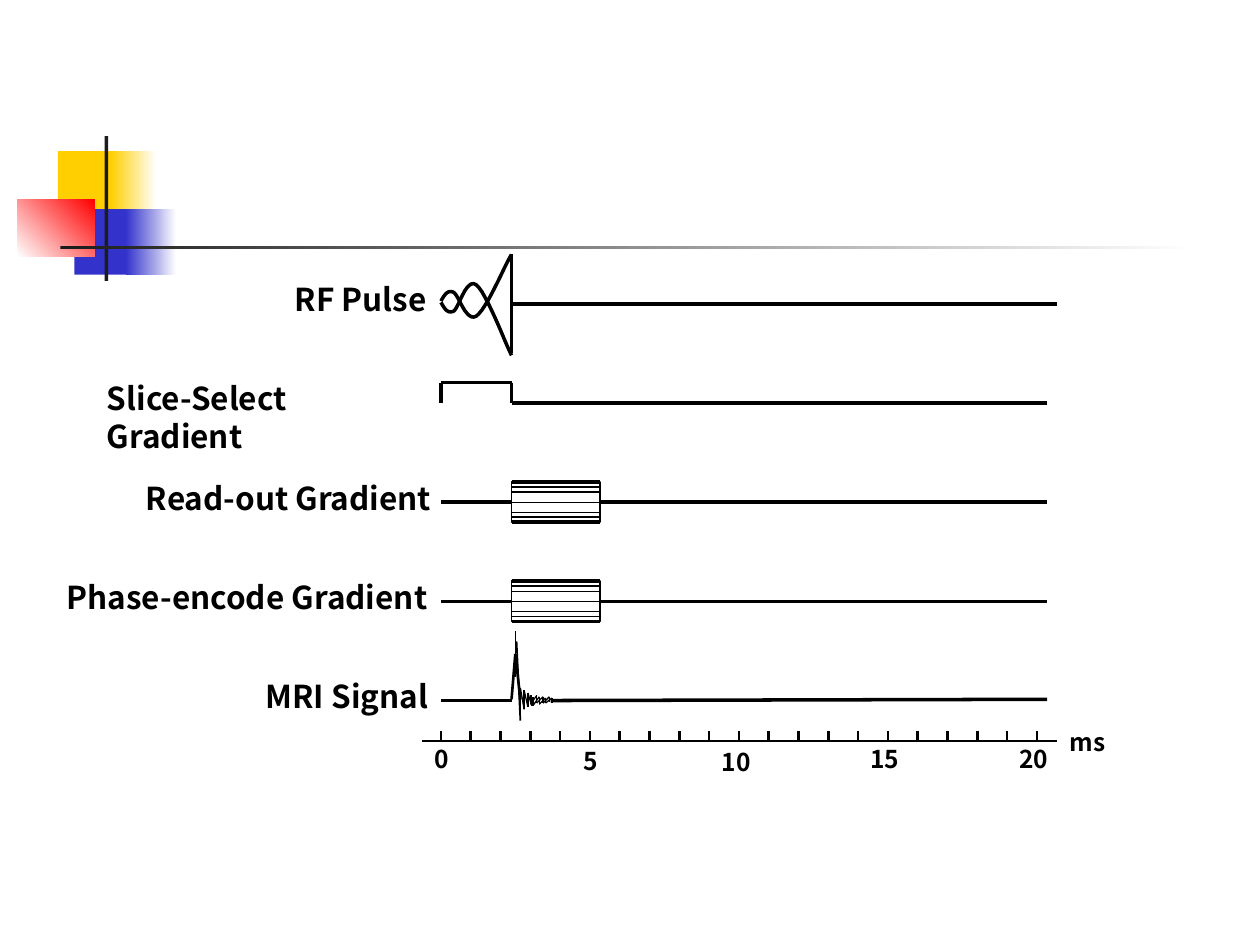
from itertools import pairwise

from lxml import etree
from pptx import Presentation
from pptx import util as u
from pptx.dml.color import RGBColor
from pptx.enum import shapes, text
from pptx.oxml.ns import qn

BLACK = RGBColor(0x00, 0x00, 0x00)
WHITE = RGBColor(0xFF, 0xFF, 0xFF)
YELLOW = RGBColor(0xFF, 0xCF, 0x01)
BLUE = RGBColor(0x33, 0x33, 0xCC)
RED = RGBColor(0xFF, 0x00, 0x00)
CHARCOAL = RGBColor(0x1C, 0x1C, 0x1C)
FONT = "Noto Sans CJK KR"

presentation = Presentation()
presentation.slide_width, presentation.slide_height = u.Inches(10), u.Inches(7.5)
slide = presentation.slides.add_slide(presentation.slide_layouts[6])

# Grid: one column per millisecond, one row per waveform
START, COLUMN = 3.5, 0.2365
PULSE_END, GATE_END, TRACE_END = 4.06, 4.76, 8.31
ROWS = [2.41 + 0.105 * 7.5 * row for row in range(5)]
RF, SLICE, READ, PHASE, SIGNAL = ROWS
AXIS = 5.88


def polyline(points, width):
    """Join the points with straight connectors and return the last one."""
    for (x1, y1), (x2, y2) in pairwise(points):
        connector = slide.shapes.add_connector(
            shapes.MSO_CONNECTOR.STRAIGHT, *map(u.Inches, (x1, y1, x2, y2)))
        connector.line.color.rgb = BLACK
        connector.line.width = u.Pt(width)
        etree.SubElement(connector._element.spPr, qn("a:effectLst"))
    return connector


def label(words, left, top, width, height, size):
    box = slide.shapes.add_textbox(*map(u.Inches, (left, top, width, height)))
    box.text_frame.word_wrap = True
    box.text_frame.auto_size = text.MSO_AUTO_SIZE.NONE
    paragraph = box.text_frame.paragraphs[0]
    paragraph.text = words
    for name, value in {"name": FONT, "size": u.Pt(size), "bold": True}.items():
        setattr(paragraph.font, name, value)
    paragraph.font.color.rgb = BLACK


# Corner ornament: left, top, width, height, start colour, end colour, angle
for *frame, first, last, angle in [
    (0.46, 1.2, 0.48, 0.52, YELLOW, YELLOW, 0),
    (0.88, 1.2, 0.36, 0.52, YELLOW, WHITE, 0),
    (0.59, 1.66, 0.46, 0.52, BLUE, BLUE, 0),
    (1, 1.66, 0.4, 0.52, BLUE, WHITE, 0),
    (0.14, 1.58, 0.61, 0.46, WHITE, RED, 45),
    (0.83, 1.08, 0.03, 1.15, CHARCOAL, CHARCOAL, 0),
    (0.48, 1.95, 9, 0.03, CHARCOAL, WHITE, 0),
]:
    shape = slide.shapes.add_shape(
        shapes.MSO_SHAPE.RECTANGLE, *map(u.Inches, frame))
    shape.shadow.inherit = False
    shape.line.fill.background()
    if first == last:
        shape.fill.solid()
        shape.fill.fore_color.rgb = first
    else:
        shape.fill.gradient()
        shape.fill.gradient_angle = angle
        for stop, colour in zip(shape.fill.gradient_stops, (first, last)):
            stop.color.rgb = colour

# Time axis with a tick per millisecond
polyline([(3.35, AXIS), (8.39, AXIS)], 1.5)
for tick in range(21):
    x = START + tick * COLUMN
    polyline([(x, AXIS - 0.08), (x, AXIS)], 1.5)
for words, left, top, width in [
    ("0", 3.35, 5.86, 0.32), ("5", 4.53, 5.87, 0.32), ("10", 5.63, 5.88, 0.47),
    ("15", 6.81, 5.86, 0.55), ("20", 7.99, 5.86, 0.47), ("ms", 8.39, 5.72, 0.63),
]:
    label(words, left, top, width, 0.33, 14)

# Waveform names
for baseline, (words, left, width) in zip(ROWS, [
    ("RF Pulse", 2.24, 1.42),
    ("Slice-Select Gradient", 0.75, 2.7),
    ("Read-out Gradient", 1.06, 2.52),
    ("Phase-encode Gradient", 0.43, 3.1),
    ("MRI Signal", 2.01, 1.52),
]):
    label(words, left, baseline - 0.235, width, 0.4, 18)

# RF pulse: two mirrored envelopes of cubic curves, in thousandths of an inch
for curve in [
    [(3500, 2390), (3530, 2340), (3550, 2300), (3600, 2320), (3640, 2340),
     (3700, 2560), (3780, 2510), (3860, 2460), (4010, 2100), (4060, 2020)],
    [(3500, 2400), (3530, 2450), (3550, 2490), (3600, 2470), (3640, 2450),
     (3700, 2200), (3780, 2260), (3860, 2320), (4010, 2720), (4060, 2820)],
]:
    points = []
    for start in range(0, 9, 3):
        for step in range(1, 13):
            t = step / 12
            weights = ((1 - t) ** 3, 3 * t * (1 - t) ** 2, 3 * t * t * (1 - t), t ** 3)
            points.append(tuple(
                sum(weight * value for weight, value in zip(weights, values))
                for values in zip(*curve[start:start + 4])))
    builder = slide.shapes.build_freeform(*curve[0], scale=u.Inches(1) / 1000)
    builder.add_line_segments(points, close=False)
    envelope = builder.convert_to_shape()
    envelope.shadow.inherit = False
    envelope.fill.background()
    envelope.line.color.rgb = BLACK
    envelope.line.width = u.Pt(2)
polyline([(PULSE_END, 2.02), (PULSE_END, 2.8)], 2)
polyline([(PULSE_END, RF), (8.39, RF)], 2.25)

# Slice-select gradient
polyline([(START, SLICE), (START, SLICE - 0.16), (PULSE_END, SLICE - 0.16),
          (PULSE_END, SLICE), (TRACE_END, SLICE)], 2)

# Read-out and phase-encode gradients: a gate of stepped levels on each
for baseline in (READ, PHASE):
    gate = slide.shapes.add_shape(
        shapes.MSO_SHAPE.RECTANGLE,
        *map(u.Inches, (PULSE_END, baseline - 0.16, GATE_END - PULSE_END, 0.32)))
    gate.shadow.inherit = False
    gate.fill.background()
    gate.line.color.rgb = BLACK
    gate.line.width = u.Pt(1)
    before = polyline([(START, baseline), (PULSE_END, baseline)], 2)
    before.end_connect(gate, 1)
    after = polyline([(GATE_END, baseline), (TRACE_END, baseline)], 2)
    after.begin_connect(gate, 3)
    for offset, width in [(-0.16, 2.25), (-0.12, 1), (-0.08, 0.75), (0, 0.5),
                          (0.08, 0.75), (0.12, 1), (0.16, 2.25)]:
        y = baseline + offset
        polyline([(PULSE_END, y), (GATE_END, y)], width)

# MRI signal: baseline, echo spike and decaying oscillation
polyline([(START, SIGNAL), (PULSE_END, SIGNAL)], 2)
polyline([(4.37, SIGNAL), (TRACE_END, 5.55)], 2)
polyline([(PULSE_END, 5.55), (4.09, 5.19), (4.13, 5.55)], 1.5)
polyline([(4.1, 5.09), (4.13, 5.72)], 1)
polyline([(4.09, 5.01), (4.09, 5.37)], 0.75)
for left, step, heights in [
    (4.13, 0.03, (5.64, 5.46, 5.63, 5.48, 5.61, 5.5, 5.6, 5.52)),
    (4.23, 0.05, (5.53, 5.6, 5.53, 5.59, 5.54, 5.58, 5.54, 5.58)),
    (4.21, 0.05, (5.52, 5.59, 5.52, 5.58, 5.53, 5.58, 5.53, 5.57)),
]:
    polyline([(left + step * (index // 2), y)
              for index, y in enumerate(heights)], 0.75)

presentation.save("out.pptx")
